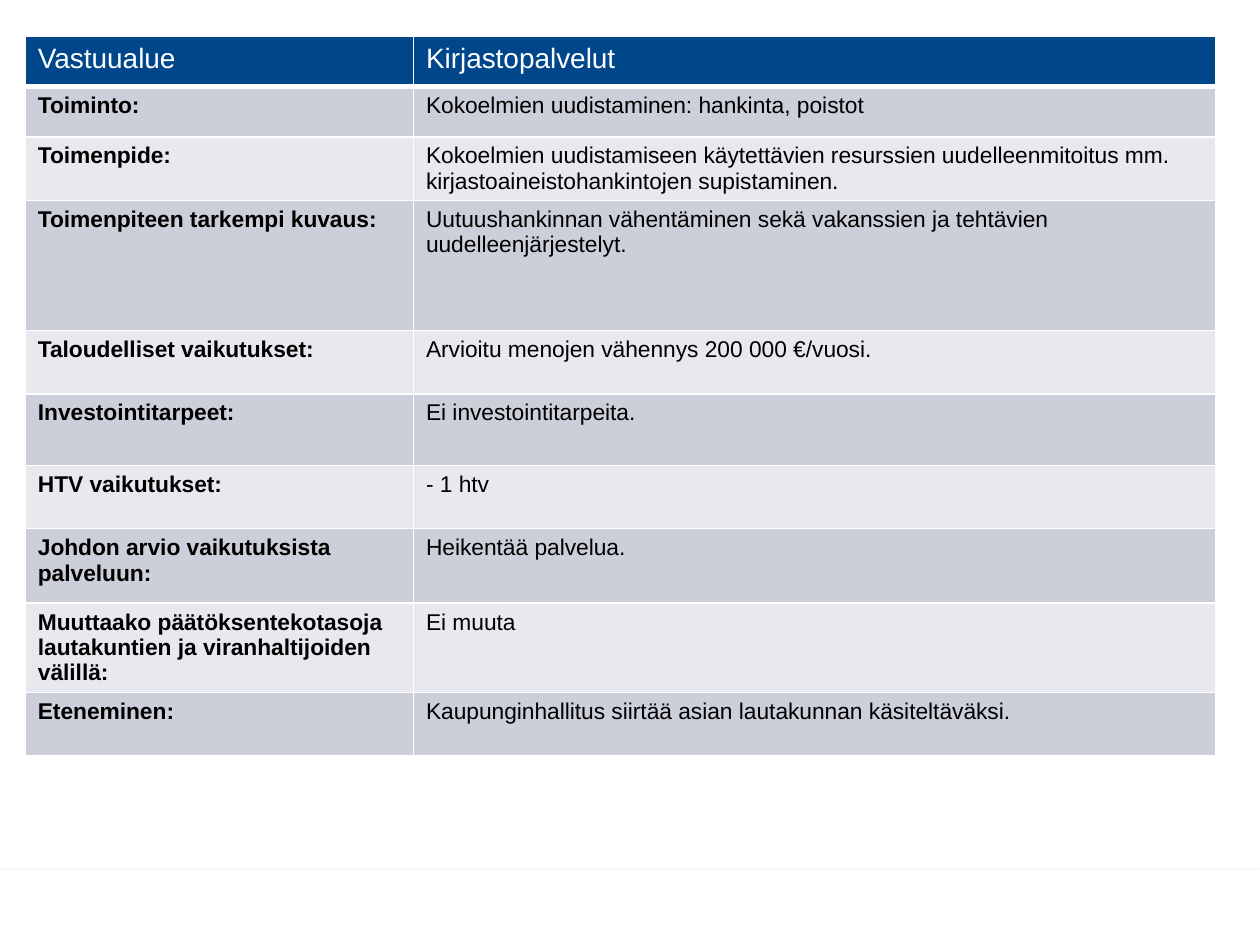
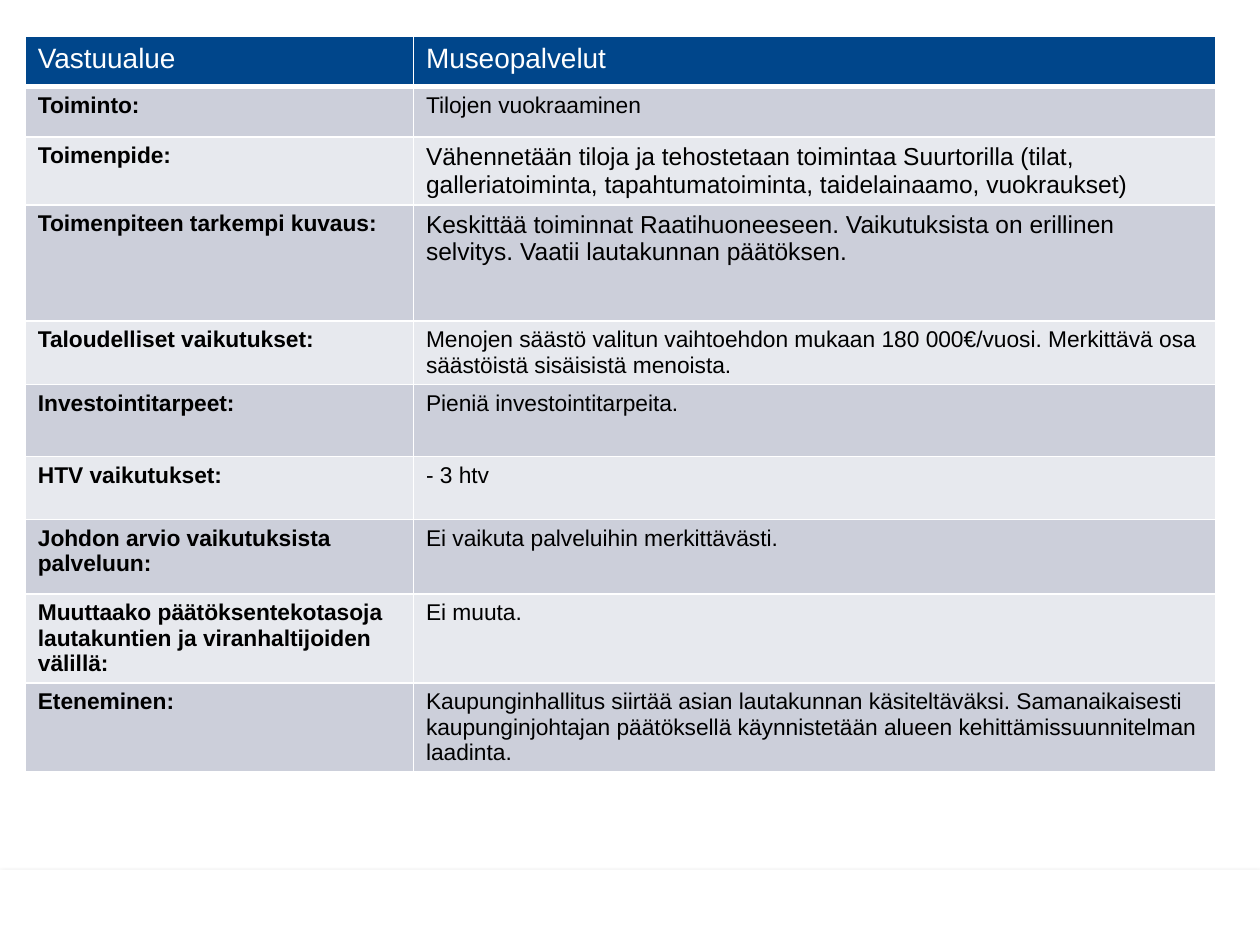
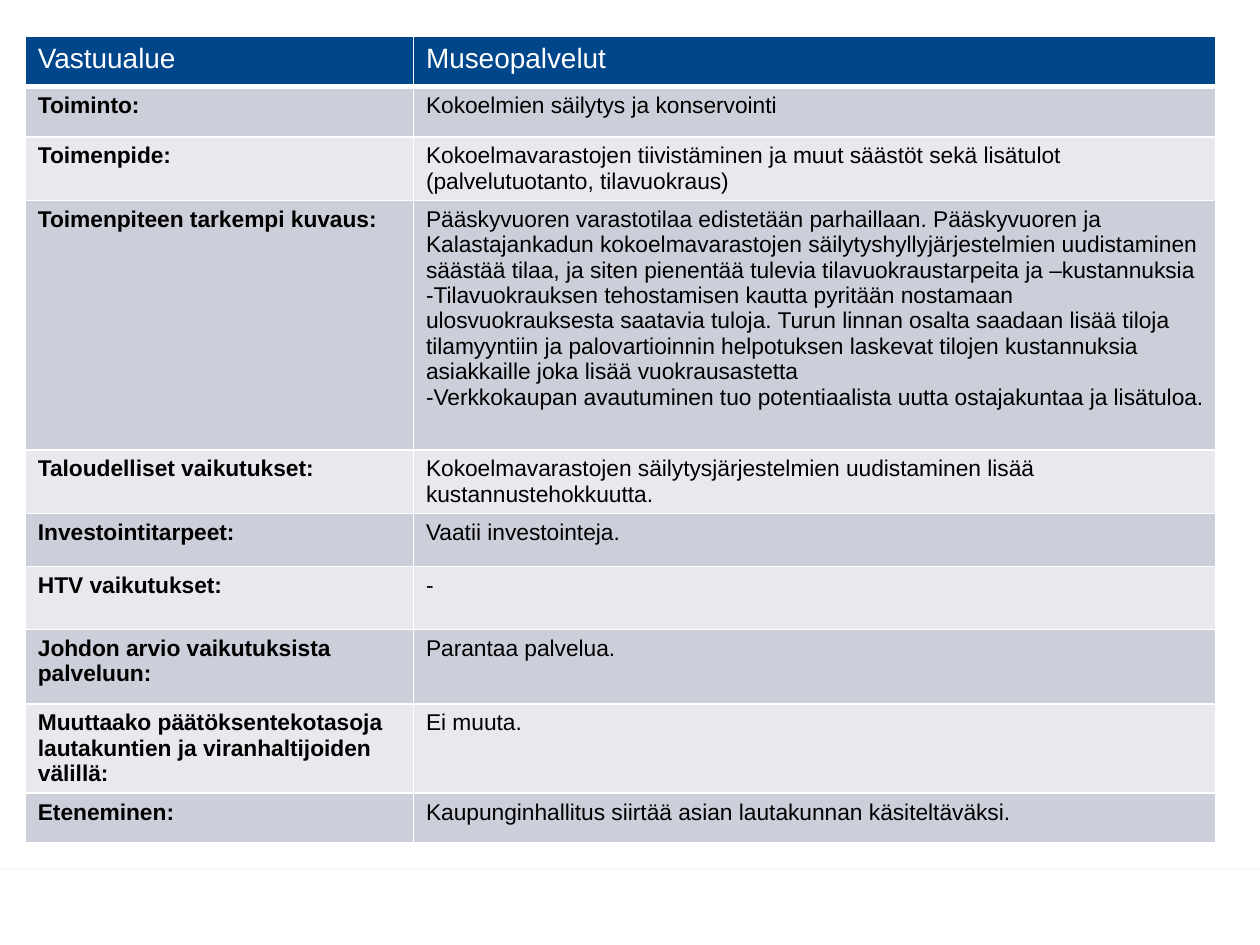
"""Builds three slides of service measures, each a two-column table above a footer band."""
from lxml import etree
from pptx import Presentation
from pptx.dml.color import RGBColor
from pptx.enum.shapes import MSO_SHAPE
from pptx.enum.text import MSO_ANCHOR
from pptx.oxml import parse_xml
from pptx.oxml.ns import nsdecls, qn
from pptx.util import Cm, Pt

RECTANGLE = MSO_SHAPE.RECTANGLE
TOP = MSO_ANCHOR.TOP

FONT = "Arial"
WHITE, BLACK, NAVY = "FFFFFF", "000000", "00468B"
STRIPES = ("CCCFDA", "E7E9EE")
SLIDE_SIZE = (25.4, 19.05)
FOOTER_BOX = (0, 17.53, 25.4, 1.52)
TABLE_BOX = (0.51, 0.74, 24)
LABEL_SHARE = 0.326
HEADER_HEIGHT = 1.0

LABELS = (
    "Toiminto:",
    "Toimenpide:",
    "Toimenpiteen tarkempi kuvaus:",
    "Taloudelliset vaikutukset:",
    "Investointitarpeet:",
    "HTV vaikutukset:",
    "Johdon arvio vaikutuksista palveluun:",
    "Muuttaako päätöksentekotasoja lautakuntien ja viranhaltijoiden välillä:",
    "Eteneminen:",
)

MEASURES = (
    {
        "area": "Kirjastopalvelut",
        "heights": (1.02, 1.27, 2.62, 1.28, 1.45, 1.27, 1.5, 1.8, 1.27),
        "answers": (
            "Kokoelmien uudistaminen: hankinta, poistot",
            "Kokoelmien uudistamiseen käytettävien resurssien uudelleenmitoitus mm. "
            "kirjastoaineistohankintojen supistaminen.",
            "Uutuushankinnan vähentäminen sekä vakanssien ja tehtävien "
            "uudelleenjärjestelyt.",
            "Arvioitu menojen vähennys 200 000 €/vuosi.",
            "Ei investointitarpeita.",
            "- 1 htv",
            "Heikentää palvelua.",
            "Ei muuta",
            "Kaupunginhallitus siirtää asian lautakunnan käsiteltäväksi.",
        ),
    },
    {
        "area": "Museopalvelut",
        "heights": (1.02, 1.37, 2.34, 1.28, 1.45, 1.27, 1.5, 1.8, 1.78),
        "large_rows": (1, 2),
        "answers": (
            "Tilojen vuokraaminen",
            "Vähennetään tiloja ja tehostetaan toimintaa Suurtorilla (tilat, "
            "galleriatoiminta, tapahtumatoiminta, taidelainaamo, vuokraukset)",
            "Keskittää toiminnat Raatihuoneeseen. Vaikutuksista on erillinen selvitys. "
            "Vaatii lautakunnan päätöksen.",
            "Menojen säästö valitun vaihtoehdon mukaan 180 000€/vuosi. Merkittävä osa "
            "säästöistä sisäisistä menoista.",
            "Pieniä investointitarpeita.",
            "- 3 htv",
            "Ei vaikuta palveluihin merkittävästi.",
            "Ei muuta.",
            "Kaupunginhallitus siirtää asian lautakunnan käsiteltäväksi. Samanaikaisesti "
            "kaupunginjohtajan päätöksellä käynnistetään alueen kehittämissuunnitelman "
            "laadinta.",
        ),
    },
    {
        "area": "Museopalvelut",
        "heights": (1.02, 1.27, 5.03, 1.28, 1.07, 1.27, 1.5, 1.8, 1.0),
        "answers": (
            "Kokoelmien säilytys ja konservointi",
            "Kokoelmavarastojen tiivistäminen ja muut säästöt sekä lisätulot "
            "(palvelutuotanto, tilavuokraus)",
            "Pääskyvuoren varastotilaa edistetään parhaillaan. Pääskyvuoren ja "
            "Kalastajankadun kokoelmavarastojen säilytyshyllyjärjestelmien uudistaminen "
            "säästää tilaa, ja siten pienentää tulevia tilavuokraustarpeita ja "
            "–kustannuksia\n"
            "-Tilavuokrauksen tehostamisen kautta pyritään nostamaan ulosvuokrauksesta "
            "saatavia tuloja. Turun linnan osalta saadaan lisää tiloja tilamyyntiin ja "
            "palovartioinnin helpotuksen laskevat tilojen kustannuksia asiakkaille joka "
            "lisää vuokrausastetta\n"
            "-Verkkokaupan avautuminen tuo potentiaalista uutta ostajakuntaa ja "
            "lisätuloa.",
            "Kokoelmavarastojen säilytysjärjestelmien uudistaminen lisää "
            "kustannustehokkuutta.",
            "Vaatii investointeja.",
            "-",
            "Parantaa palvelua.",
            "Ei muuta.",
            "Kaupunginhallitus siirtää asian lautakunnan käsiteltäväksi.",
        ),
    },
)


def paint(fill, color):
    """Give a fill one solid colour from a hex string."""
    fill.solid()
    fill.fore_color.rgb = RGBColor.from_string(color)


def write(frame, text, size=13, color=BLACK, bold=False):
    """Fill a text frame with one formatted paragraph per line."""
    frame.text = text
    for paragraph in frame.paragraphs:
        for run in paragraph.runs:
            run.font.name = FONT
            run.font.size = Pt(size)
            run.font.bold = bold
            paint(run.font.fill, color)


def add_borders(cell, bottom=1):
    """Draw white borders around a cell, with its own bottom width in points."""
    properties = cell._tc.get_or_add_tcPr()
    widths = {"lnL": 1, "lnR": 1, "lnT": 1, "lnB": bottom}
    for position, (side, width) in enumerate(widths.items()):
        properties.insert(position, parse_xml(
            f'<a:{side} {nsdecls("a")} w="{Pt(width)}"><a:solidFill>'
            f'<a:srgbClr val="{WHITE}"/></a:solidFill></a:{side}>'))


def fill_cell(cell, text, background, bottom=1, **text_format):
    """Write, colour and border one table cell."""
    cell.vertical_anchor = TOP
    write(cell.text_frame, text, **text_format)
    paint(cell.fill, background)
    add_borders(cell, bottom)


def add_footer(slide, box):
    """Add the white footer band with a soft shadow along its edge."""
    band = slide.shapes.add_shape(RECTANGLE, *map(Cm, box))
    paint(band.fill, WHITE)
    band.line.fill.background()
    band.shadow.inherit = False
    effects = band._element.spPr.find(qn("a:effectLst"))
    shadow = etree.SubElement(effects, qn("a:outerShdw"), blurRad=str(Pt(3.1)),
                              dist=str(Pt(1.8)), dir="5400000", rotWithShape="0")
    tint = etree.SubElement(shadow, qn("a:srgbClr"), val=BLACK)
    etree.SubElement(tint, qn("a:alpha"), val="35000")


def add_measure_table(slide, box, area, heights, answers, large_rows=()):
    """Add the table of one measure: a header and a labelled row per answer."""
    left, top, width = box
    row_heights = (HEADER_HEIGHT, *heights)
    table = slide.shapes.add_table(
        len(row_heights), 2, Cm(left), Cm(top), Cm(width), Cm(sum(row_heights))).table
    for column, share in zip(table.columns, (LABEL_SHARE, 1 - LABEL_SHARE)):
        column.width = Cm(width * share)
    for row, height in zip(table.rows, row_heights):
        row.height = Cm(height)
    for column, heading in enumerate(("Vastuualue", area)):
        fill_cell(table.cell(0, column), heading, NAVY, bottom=3, size=16, color=WHITE)
    for index, (label, answer) in enumerate(zip(LABELS, answers)):
        stripe = STRIPES[index % 2]
        fill_cell(table.cell(index + 1, 0), label, stripe, bold=True)
        fill_cell(table.cell(index + 1, 1), answer, stripe,
                  size=14 if index in large_rows else 13)


def main():
    """Build and save the presentation."""
    presentation = Presentation()
    presentation.slide_width, presentation.slide_height = map(Cm, SLIDE_SIZE)
    blank = presentation.slide_layouts[6]
    for measure in MEASURES:
        slide = presentation.slides.add_slide(blank)
        add_footer(slide, FOOTER_BOX)
        add_measure_table(slide, TABLE_BOX, **measure)
    presentation.save("out.pptx")


if __name__ == "__main__":
    main()
